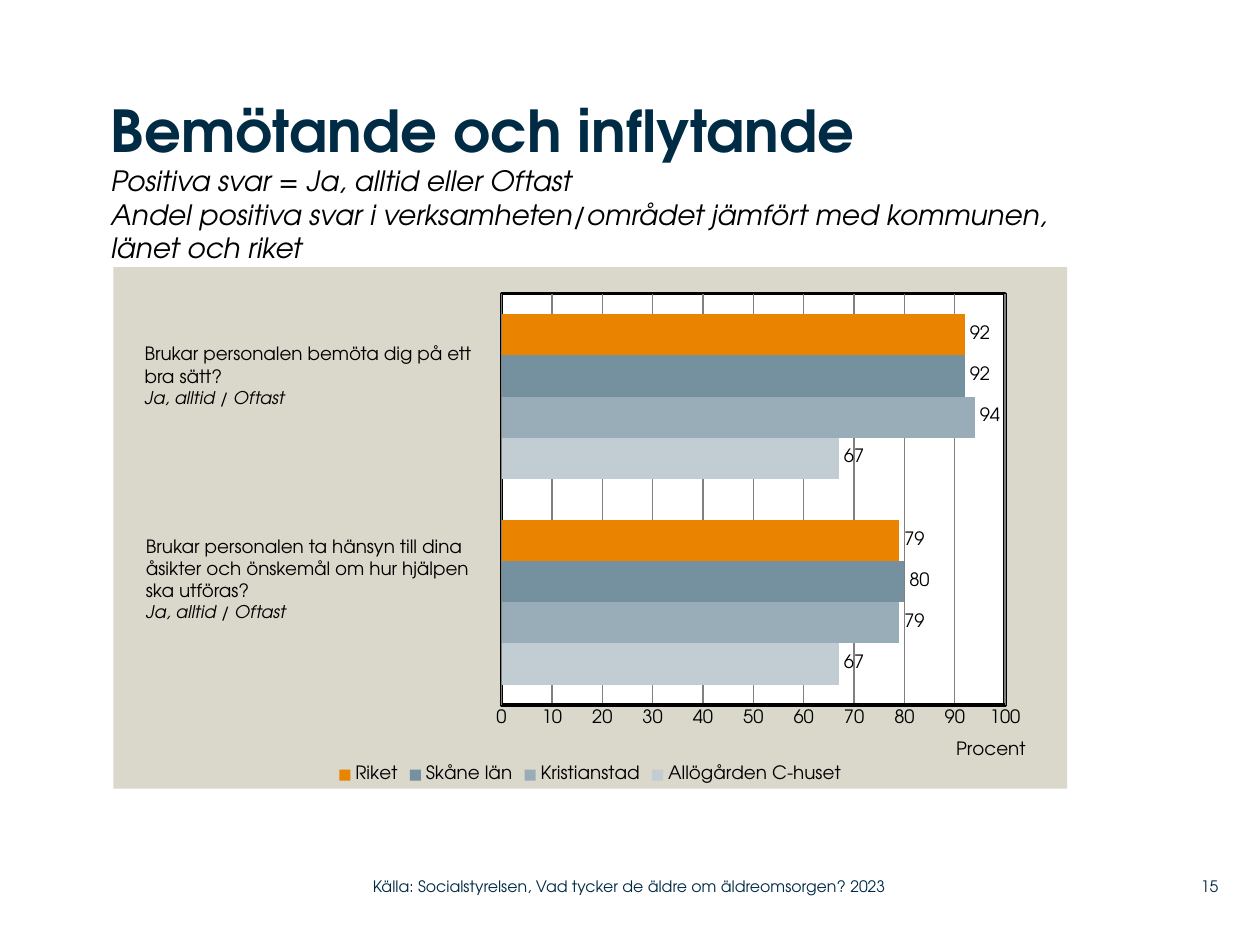
from dataclasses import dataclass

from lxml.etree import SubElement
from pptx import Presentation
from pptx.chart.data import CategoryChartData
from pptx.dml.color import RGBColor
from pptx.enum.chart import XL_CHART_TYPE, XL_LABEL_POSITION, XL_LEGEND_POSITION, XL_TICK_MARK
from pptx.enum.text import MSO_ANCHOR, MSO_AUTO_SIZE, PP_ALIGN
from pptx.oxml import parse_xml
from pptx.oxml.ns import nsdecls, qn
from pptx.util import Inches, Pt


@dataclass(frozen=True)
class Theme:
    font: str = "TeX Gyre Adventor"
    navy: str = "002B45"
    black: str = "000000"
    grid: str = "808080"
    panel: str = "DAD7CB"
    white: str = "FFFFFF"
    title: float = 33
    subtitle: float = 16
    body: float = 10.5
    answer: float = 10
    footer: float = 9


@dataclass(frozen=True)
class Area:
    """A place on the page, in shares of its width and height."""
    left: float
    top: float
    width: float
    height: float

    def lengths(self) -> tuple:
        wide, high = Inches(10), Inches(7.5)
        return (int(self.left * wide), int(self.top * high),
                int(self.width * wide), int(self.height * high))


@dataclass(frozen=True)
class Question:
    area: Area
    lines: tuple


@dataclass(frozen=True)
class Group:
    name: str
    values: tuple
    color: str


THEME = Theme()
TITLE_AREA = Area(0.088, 0.1, 0.804, 0.16)
CHART_AREA = Area(0.09, 0.2827, 0.757, 0.552)
SOURCE_AREA = Area(0.296, 0.9187, 0.443, 0.0387)
NUMBER_AREA = Area(0.92, 0.9187, 0.047, 0.0387)

QUESTIONS = (
    Question(Area(0.105, 0.356, 0.297, 0.108),
             ("Brukar personalen bemöta dig på ett", "bra sätt?")),
    Question(Area(0.106, 0.56, 0.301, 0.1307),
             ("Brukar personalen ta hänsyn till dina",
              "åsikter och önskemål om hur hjälpen", "ska utföras?")),
)
GROUPS = (
    Group("Allögården C-huset", (67, 67), "C2CDD3"),
    Group("Kristianstad", (79, 94), "99ADB9"),
    Group("Skåne län", (80, 92), "75909F"),
    Group("Riket", (79, 92), "E98300"),
)


def write(para, text: str, *, size: float, color: str = THEME.black,
          bold: bool = False, italic: bool = False) -> None:
    """Add text to a paragraph; each newline becomes a line break."""
    for number, line in enumerate(text.split("\n")):
        if number:
            para.add_line_break()
        if line:
            span = para.add_run()
            span.text = line
            font = span.font
            font.name, font.size, font.bold, font.italic = THEME.font, Pt(size), bold, italic
            font.color.rgb = RGBColor.from_string(color)


def clear_margins(frame) -> None:
    frame.margin_left = frame.margin_top = frame.margin_right = frame.margin_bottom = 0


def add_box(page, area: Area):
    frame = page.shapes.add_textbox(*area.lengths()).text_frame
    frame.word_wrap = True
    return frame


def add_title(page) -> None:
    title = page.shapes.title
    title.left, title.top, title.width, title.height = TITLE_AREA.lengths()
    frame = title.text_frame
    clear_margins(frame)
    frame.word_wrap = True
    frame.auto_size = MSO_AUTO_SIZE.NONE
    frame.vertical_anchor = MSO_ANCHOR.TOP
    para = frame.paragraphs[0]
    para.alignment = PP_ALIGN.LEFT
    write(para, "Bemötande och inflytande\n", size=THEME.title, color=THEME.navy, bold=True)
    write(para, "Positiva svar = Ja, alltid eller Oftast\n"
                "Andel positiva svar i verksamheten/området jämfört med kommunen, länet och riket",
          size=THEME.subtitle, italic=True)


def add_question(page, question: Question) -> None:
    frame = add_box(page, question.area)
    frame.auto_size = MSO_AUTO_SIZE.SHAPE_TO_FIT_TEXT
    for number, line in enumerate(question.lines):
        para = frame.add_paragraph() if number else frame.paragraphs[0]
        write(para, line, size=THEME.body)
    write(frame.add_paragraph(), "Ja, alltid / Oftast", size=THEME.answer, italic=True)


def add_footer(page, area: Area, text: str, align) -> None:
    frame = add_box(page, area)
    clear_margins(frame)
    frame.vertical_anchor = MSO_ANCHOR.MIDDLE
    frame.paragraphs[0].alignment = align
    write(frame.paragraphs[0], text, size=THEME.footer, color=THEME.navy)


def chart_fill(color: str, line: str = ""):
    """Fill and outline for a chart part; no line colour means no outline."""
    outline = (f'<a:ln w="{Pt(2)}"><a:solidFill><a:srgbClr val="{line}"/></a:solidFill></a:ln>'
               if line else "<a:ln><a:noFill/></a:ln>")
    return parse_xml(f'<c:spPr {nsdecls("c", "a")}><a:solidFill><a:srgbClr val="{color}"/>'
                     f"</a:solidFill>{outline}</c:spPr>")


def place(part, position: int, **settings) -> None:
    """Give a chart part a manual layout in shares of the chart."""
    for old in part.findall(qn("c:layout")):
        part.remove(old)
    layout = parse_xml(f'<c:layout {nsdecls("c")}><c:manualLayout/></c:layout>')
    for name, value in settings.items():
        SubElement(layout[0], qn(f"c:{name}")).set("val", str(value))
    part.insert(position, layout)


def add_bar_chart(page) -> None:
    data = CategoryChartData()
    data.categories = ["1", "2"]
    for group in GROUPS:
        data.add_series(group.name, group.values)
    chart = page.shapes.add_chart(XL_CHART_TYPE.BAR_CLUSTERED, *CHART_AREA.lengths(), data).chart
    chart.has_title = False
    chart.font.name, chart.font.size = THEME.font, Pt(THEME.body)
    chart.font.color.rgb = RGBColor.from_string(THEME.black)
    chart.has_legend = True
    chart.legend.position = XL_LEGEND_POSITION.BOTTOM
    chart.legend.include_in_layout = False

    # Bars and their values
    plot = chart.plots[0]
    plot.gap_width, plot.overlap, plot.vary_by_categories = 100, 0, False
    plot.has_data_labels = True
    plot.data_labels.show_value = True
    plot.data_labels.position = XL_LABEL_POSITION.OUTSIDE_END
    for series, group in zip(plot.series, GROUPS):
        series.format.fill.solid()
        series.format.fill.fore_color.rgb = RGBColor.from_string(group.color)

    # Axes
    chart.category_axis.visible = False
    axis = chart.value_axis
    axis.minimum_scale, axis.maximum_scale, axis.major_unit = 0, 100, 10
    axis.major_tick_mark = axis.minor_tick_mark = XL_TICK_MARK.NONE
    axis.has_major_gridlines = True
    for line, color, width in ((axis.format.line, THEME.black, 2),
                               (axis.major_gridlines.format.line, THEME.grid, 0.75)):
        line.color.rgb = RGBColor.from_string(color)
        line.width = Pt(width)
    write(axis.axis_title.text_frame.paragraphs[0], "Procent", size=THEME.body)

    # Backgrounds and manual positions
    space = chart.element
    space.find(qn("c:chart")).addnext(chart_fill(THEME.panel))
    plot_area = space.find(".//" + qn("c:plotArea"))
    plot_area.append(chart_fill(THEME.white, THEME.black))
    place(plot_area, 0, layoutTarget="inner", xMode="edge", yMode="edge",
          x=0.407, y=0.051, w=0.528, h=0.789)
    place(plot_area.find(".//" + qn("c:title")), 1, xMode="edge", yMode="edge", x=0.88, y=0.9)


def main() -> None:
    deck = Presentation()
    deck.slide_width, deck.slide_height = Inches(10), Inches(7.5)
    page = deck.slides.add_slide(deck.slide_layouts[5])
    add_bar_chart(page)
    add_title(page)
    for question in QUESTIONS:
        add_question(page, question)
    add_footer(page, NUMBER_AREA, "15", PP_ALIGN.RIGHT)
    add_footer(page, SOURCE_AREA,
               "Källa: Socialstyrelsen, Vad tycker de äldre om äldreomsorgen? 2023", PP_ALIGN.LEFT)
    deck.save("out.pptx")


if __name__ == "__main__":
    main()
